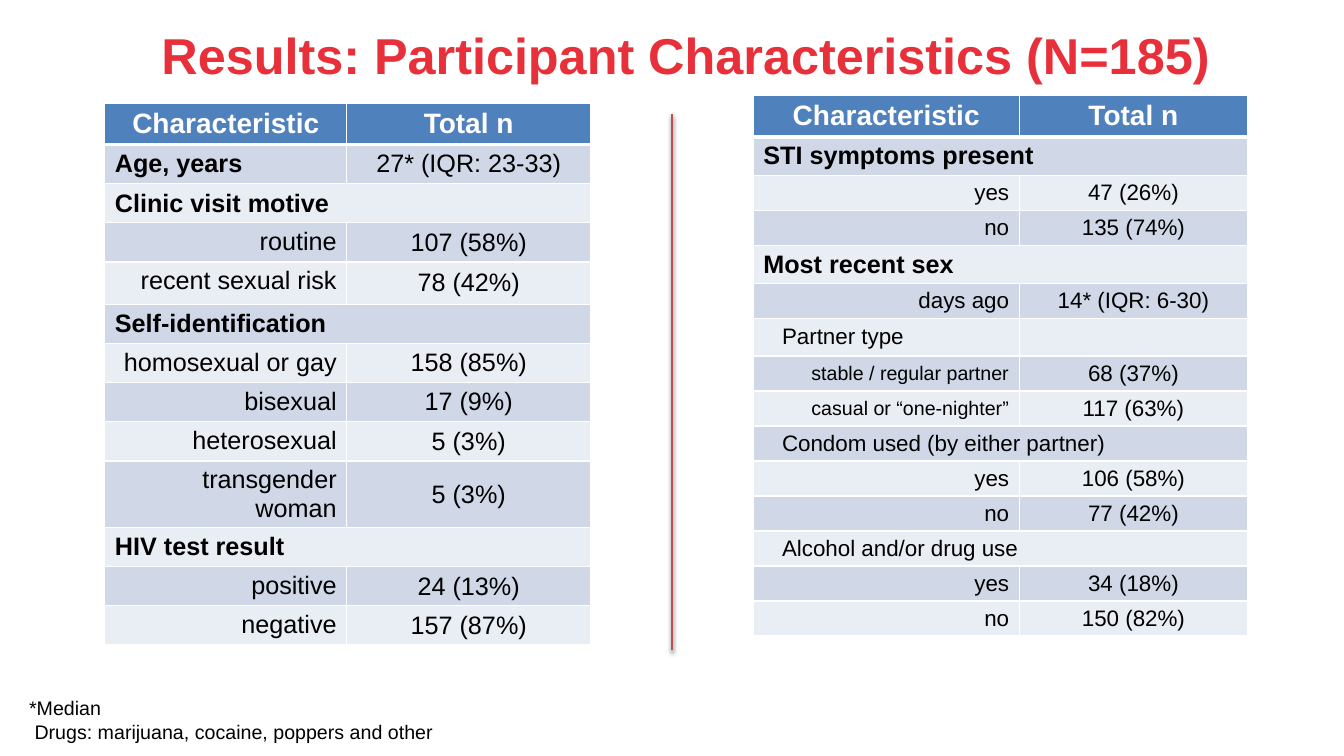
from lxml import etree
from pptx import Presentation
from pptx.dml.color import RGBColor
from pptx.enum.shapes import MSO_CONNECTOR
from pptx.enum.text import MSO_ANCHOR, MSO_AUTO_SIZE, PP_ALIGN
from pptx.oxml import parse_xml
from pptx.oxml.ns import nsdecls, qn
from pptx.util import Pt

LEFT, CENTER, RIGHT = PP_ALIGN.LEFT, PP_ALIGN.CENTER, PP_ALIGN.RIGHT
TOP, MIDDLE = MSO_ANCHOR.TOP, MSO_ANCHOR.MIDDLE
STRAIGHT = MSO_CONNECTOR.STRAIGHT

# Content: rows are (kind, label, value); a value of None spans both columns
TITLE = "Results: Participant Characteristics (N=185)"
FOOTNOTES = ["*Median", "Drugs: marijuana, cocaine, poppers and other"]
HEADER = ("header", "Characteristic", "Total n")
DEMOGRAPHICS = [
    HEADER,
    ("section", "Age, years", "27* (IQR: 23-33)"),
    ("section", "Clinic visit motive", None),
    ("item", "routine", "107 (58%)"),
    ("item", "recent sexual risk", "78 (42%)"),
    ("section", "Self-identification", None),
    ("item", "homosexual or gay", "158 (85%)"),
    ("item", "bisexual", "17 (9%)"),
    ("item", "heterosexual", "5 (3%)"),
    ("item", "transgender woman", "5 (3%)"),
    ("section", "HIV test result", None),
    ("item", "positive", "24 (13%)"),
    ("item", "negative", "157 (87%)"),
]
BEHAVIOUR = [
    HEADER,
    ("section", "STI symptoms present", None),
    ("item", "yes", "47 (26%)"),
    ("item", "no", "135 (74%)"),
    ("section", "Most recent sex", None),
    ("item", "days ago", "14* (IQR: 6-30)"),
    ("group", "Partner type", ""),
    ("small", "stable / regular partner", "68 (37%)"),
    ("small", "casual or “one-nighter”", "117 (63%)"),
    ("group", "Condom used (by either partner)", None),
    ("item", "yes", "106 (58%)"),
    ("item", "no", "77 (42%)"),
    ("group", "Alcohol and/or drug use", None),
    ("item", "yes", "34 (18%)"),
    ("item", "no", "150 (82%)"),
]
TABLES = [
    dict(rows=DEMOGRAPHICS, at=(74.9, 73.7), columns=(172.8, 174.2), body=18,
         label_anchor=TOP, header=28, row=28, special={4: 30.2}),
    dict(rows=BEHAVIOUR, at=(538.1, 68.2), columns=(189.9, 163.2), body=16,
         label_anchor=MIDDLE, header=29.5, row=24, special={4: 25.2}),
]

THEME = {
    "font": "Arial", "title": "E8303B", "text": "000000", "white": "FFFFFF",
    "header": "4F81BD", "bands": ("E9EDF4", "D0D8E8"), "divider": "C0504D",
    "title_size": 36, "header_size": 20, "section_size": 18, "small_size": 14,
}
GROUP_INDENT = 20.5
FOOTNOTE_INDENT = 3.9


def style_paragraph(paragraph, size, color, bold=False, align=LEFT):
    paragraph.alignment = align
    for run in paragraph.runs:
        run.font.name = THEME["font"]
        run.font.size = Pt(size)
        run.font.bold = bold
        run.font.color.rgb = RGBColor.from_string(color)


def set_borders(cell, bottom_width):
    properties = cell._tc.get_or_add_tcPr()
    for side, width in (("L", 1), ("R", 1), ("T", 1), ("B", bottom_width)):
        line = etree.SubElement(properties, qn(f"a:ln{side}"), w=str(int(Pt(width))))
        fill = etree.SubElement(line, qn("a:solidFill"))
        etree.SubElement(fill, qn("a:srgbClr"), val=THEME["white"])


def fill_cell(cell, text, size, color, fill, bold, align, anchor, bottom_width):
    set_borders(cell, bottom_width)
    cell.fill.solid()
    cell.fill.fore_color.rgb = RGBColor.from_string(fill)
    cell.vertical_anchor = anchor
    paragraph = cell.text_frame.paragraphs[0]
    paragraph.text = text
    style_paragraph(paragraph, size, color, bold, align)
    if not text:  # keeps an empty cell from stretching its row
        etree.SubElement(paragraph._p, qn("a:endParaRPr"), sz=str(size * 100))


def add_results_table(slide, layout):
    rows, body = layout["rows"], layout["body"]
    heights = [layout["special"].get(i, layout["row"]) for i in range(len(rows))]
    heights[0] = layout["header"]
    left, top = layout["at"]
    table = slide.shapes.add_table(
        len(rows), 2, Pt(left), Pt(top),
        Pt(sum(layout["columns"])), Pt(sum(heights))).table
    for column, width in zip(table.columns, layout["columns"]):
        column.width = Pt(width)
    label_sizes = {"header": THEME["header_size"], "section": THEME["section_size"],
                   "small": THEME["small_size"]}
    label_aligns = {"header": CENTER, "item": RIGHT, "small": RIGHT}

    for index, (kind, label, value) in enumerate(rows):
        is_header = kind == "header"
        table.rows[index].height = Pt(heights[index])
        label_cell, value_cell = table.cell(index, 0), table.cell(index, 1)
        color = THEME["white"] if is_header else THEME["text"]
        fill = THEME["header"] if is_header else THEME["bands"][index % 2]
        bottom_width = 3 if is_header else 1
        if value is None:
            label_cell.merge(value_cell)
        fill_cell(label_cell, label, label_sizes.get(kind, body), color, fill,
                  kind in ("header", "section"), label_aligns.get(kind, LEFT),
                  MIDDLE if value is None else layout["label_anchor"], bottom_width)
        if kind == "group":
            label_cell.margin_left = Pt(GROUP_INDENT)
        fill_cell(value_cell, value or "", THEME["header_size"] if is_header else body,
                  color, fill, is_header, CENTER, TOP if is_header else MIDDLE,
                  bottom_width)


def add_divider(slide):
    divider = slide.shapes.add_connector(STRAIGHT, Pt(480), Pt(81.4), Pt(480), Pt(464.4))
    divider.line.color.rgb = RGBColor.from_string(THEME["divider"])
    divider.line.width = Pt(2)
    divider._element.spPr.append(parse_xml(
        f'<a:effectLst {nsdecls("a")}><a:outerShdw blurRad="40000" dist="20000" '
        'dir="5400000" rotWithShape="0"><a:srgbClr val="000000">'
        '<a:alpha val="38000"/></a:srgbClr></a:outerShdw></a:effectLst>'))


def add_footnotes(slide):
    text_frame = slide.shapes.add_textbox(
        Pt(13.7), Pt(493.9), Pt(304.6), Pt(41)).text_frame
    text_frame.word_wrap = False
    text_frame.auto_size = MSO_AUTO_SIZE.SHAPE_TO_FIT_TEXT
    text_frame.text = "\n".join(FOOTNOTES)
    for paragraph in text_frame.paragraphs:
        style_paragraph(paragraph, THEME["small_size"], THEME["text"])
    text_frame.paragraphs[1]._p.get_or_add_pPr().set("marL", str(int(Pt(FOOTNOTE_INDENT))))


def main():
    presentation = Presentation()
    presentation.slide_width, presentation.slide_height = Pt(960), Pt(540)
    slide = presentation.slides.add_slide(presentation.slide_layouts[5])

    # Title
    title = slide.shapes.title
    title.left, title.top, title.width, title.height = Pt(69.1), Pt(5.8), Pt(841.7), Pt(65.5)
    title.text_frame.text = TITLE
    title.text_frame.vertical_anchor = MIDDLE
    title.text_frame.auto_size = MSO_AUTO_SIZE.NONE
    style_paragraph(title.text_frame.paragraphs[0], THEME["title_size"],
                    THEME["title"], True, CENTER)

    # Tables, divider and footnotes
    for layout in TABLES:
        add_results_table(slide, layout)
    add_divider(slide)
    add_footnotes(slide)
    presentation.save("out.pptx")


if __name__ == "__main__":
    main()
